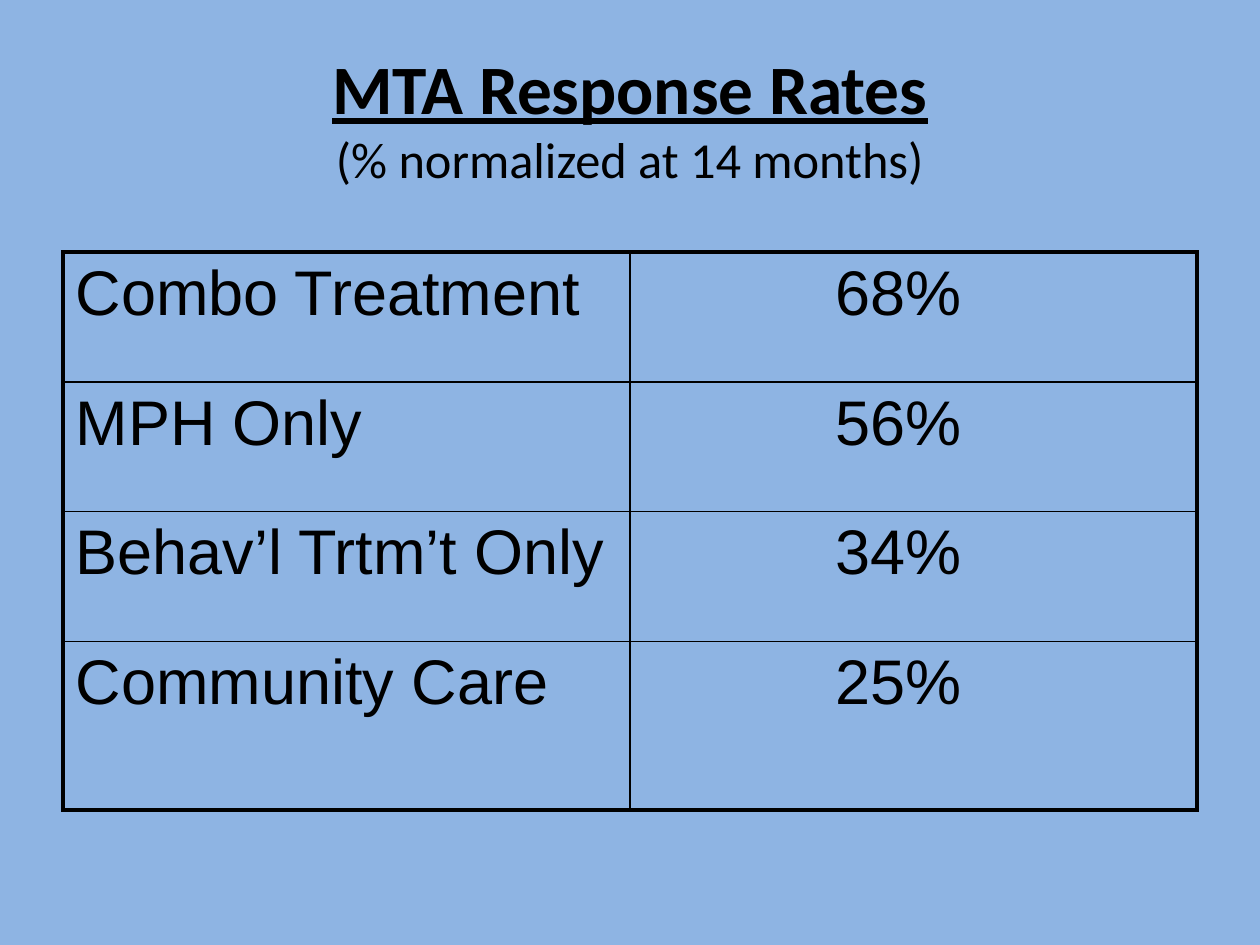
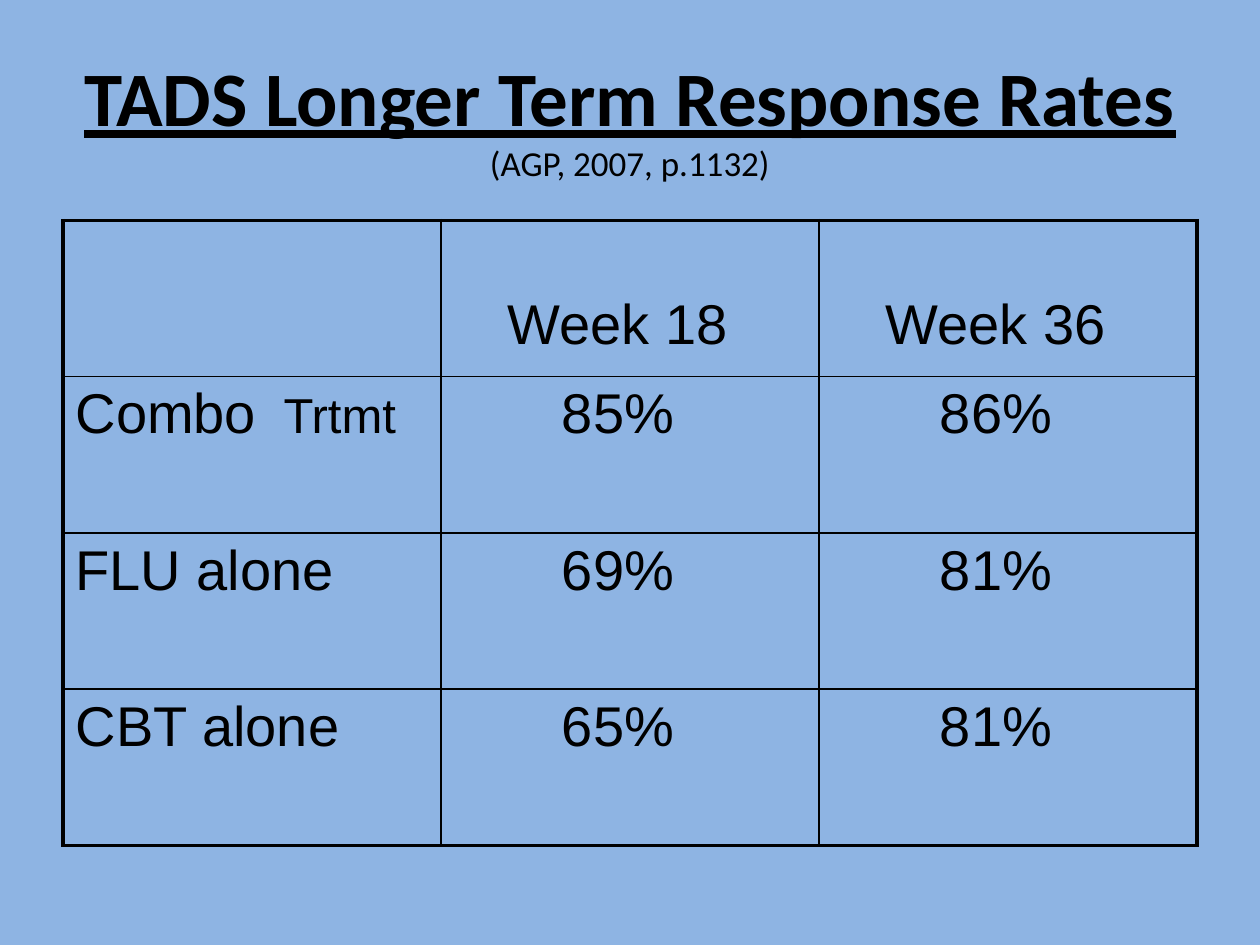
from dataclasses import dataclass

from lxml.etree import SubElement
from pptx import Presentation
from pptx.dml.color import RGBColor
from pptx.enum.text import MSO_ANCHOR, MSO_AUTO_SIZE, PP_ALIGN
from pptx.oxml.ns import qn
from pptx.util import Emu, Pt

EMU_PER_PX = 9144
COLORS = {"background": "8EB4E3", "ink": "000000"}
OUTER_BORDER, INNER_BORDER = Pt(2.25), Pt(1)
TITLE_BOX = {"left": 50, "top": 30, "width": 900, "height": 125}
TITLE_FRAME = {
    "vertical_anchor": MSO_ANCHOR.MIDDLE,
    "word_wrap": True,
    "auto_size": MSO_AUTO_SIZE.NONE,
}
HEADING_FORMAT = {"name": "Calibri", "bold": True, "underline": True}
SUBTITLE_FORMAT = {"name": "Calibri", "bold": False, "underline": False}
CELL_FORMAT = {"name": "Arial", "bold": False}
HEADER_CELL = {"vertical_anchor": MSO_ANCHOR.BOTTOM, "margin_bottom": Emu(16 * EMU_PER_PX)}
PLAIN_TABLE = {"first_row": False, "horz_banding": False}


@dataclass(frozen=True)
class TextRun:
    text: str
    size: float
    tracking: int = 0


@dataclass(frozen=True)
class RateTable:
    top: int
    row_heights: list[int]
    text_size: int
    value_indent: int
    rows: list[list[str | list[TextRun]]]
    header_indent: int | None = None


@dataclass(frozen=True)
class RateSlide:
    heading: TextRun
    subtitle: TextRun
    table: RateTable


RATE_SLIDES = [
    RateSlide(
        TextRun("MTA Response Rates", 39.6),
        TextRun("(% normalized at 14 months)", 28.8),
        RateTable(
            top=200,
            row_heights=[103, 103, 103, 134],
            text_size=36,
            value_indent=153,
            rows=[
                ["Combo Treatment", "68%"],
                ["MPH Only", "56%"],
                ["Behav’l Trtm’t Only", "34%"],
                ["Community Care", "25%"],
            ],
        ),
    ),
    RateSlide(
        TextRun("TADS Longer Term Response Rates", 44),
        TextRun("(AGP, 2007, p.1132)", 20),
        RateTable(
            top=175,
            row_heights=[124] * 4,
            text_size=32,
            value_indent=86,
            header_indent=43,
            rows=[
                ["", "Week 18", "Week 36"],
                [
                    [TextRun("Combo", 32), TextRun(" ", 28, 780), TextRun("Trtmt", 28)],
                    "85%",
                    "86%",
                ],
                ["FLU alone", "69%", "81%"],
                ["CBT alone", "65%", "81%"],
            ],
        ),
    ),
]


def px(length: int) -> Emu:
    return Emu(length * EMU_PER_PX)


def apply_format(target, values: dict) -> None:
    for name, value in values.items():
        setattr(target, name, value)


def add_run(paragraph, text_run: TextRun, font_format: dict) -> None:
    run = paragraph.add_run()
    run.text = text_run.text
    apply_format(run.font, {**font_format, "size": Pt(text_run.size)})
    run.font.color.rgb = RGBColor.from_string(COLORS["ink"])
    if text_run.tracking:
        run.font._element.set("spc", str(text_run.tracking))


def fill_title(slide, heading: TextRun, subtitle: TextRun) -> None:
    title = slide.shapes.title
    apply_format(title, {name: px(length) for name, length in TITLE_BOX.items()})
    apply_format(title.text_frame, TITLE_FRAME)
    paragraph = title.text_frame.paragraphs[0]
    paragraph.alignment = PP_ALIGN.CENTER
    add_run(paragraph, heading, HEADING_FORMAT)
    paragraph.add_line_break()
    line_break = paragraph._p.find(qn("a:br"))
    SubElement(line_break, qn("a:rPr"), sz=str(round(heading.size * 100)))
    add_run(paragraph, subtitle, SUBTITLE_FORMAT)


def draw_borders(cell, outer_sides: dict[str, bool]) -> None:
    properties = cell._tc.get_or_add_tcPr()
    for side, is_outer in outer_sides.items():
        width = OUTER_BORDER if is_outer else INNER_BORDER
        line = SubElement(properties, qn(f"a:ln{side}"), w=str(width))
        fill = SubElement(line, qn("a:solidFill"))
        SubElement(fill, qn("a:srgbClr"), val=COLORS["ink"])


def add_rate_table(slide, rates: RateTable) -> None:
    row_count, column_count = len(rates.rows), len(rates.rows[0])
    table = slide.shapes.add_table(
        row_count, column_count,
        px(TITLE_BOX["left"]), px(rates.top),
        px(TITLE_BOX["width"]), px(sum(rates.row_heights)),
    ).table
    apply_format(table, PLAIN_TABLE)
    for row, height in zip(table.rows, rates.row_heights):
        row.height = px(height)

    for row_index, row_content in enumerate(rates.rows):
        is_header = row_index == 0 and rates.header_indent is not None
        indent = rates.header_indent if is_header else rates.value_indent
        for column_index, content in enumerate(row_content):
            cell = table.cell(row_index, column_index)
            draw_borders(cell, {
                "L": column_index == 0,
                "R": column_index == column_count - 1,
                "T": row_index == 0,
                "B": row_index == row_count - 1,
            })
            cell.fill.background()
            if is_header:
                apply_format(cell, HEADER_CELL)
            if not content:
                continue
            paragraph = cell.text_frame.paragraphs[0]
            if column_index > 0:
                paragraph._p.get_or_add_pPr().set("marL", str(px(indent)))
            runs = [TextRun(content, rates.text_size)] if isinstance(content, str) else content
            for text_run in runs:
                add_run(paragraph, text_run, CELL_FORMAT)


def main() -> None:
    presentation = Presentation()
    presentation.slide_width, presentation.slide_height = px(1000), px(750)
    background = presentation.slide_master.background.fill
    background.solid()
    background.fore_color.rgb = RGBColor.from_string(COLORS["background"])
    title_only = presentation.slide_layouts.get_by_name("Title Only")
    for rate_slide in RATE_SLIDES:
        slide = presentation.slides.add_slide(title_only)
        fill_title(slide, rate_slide.heading, rate_slide.subtitle)
        add_rate_table(slide, rate_slide.table)
    presentation.save("out.pptx")


if __name__ == "__main__":
    main()
